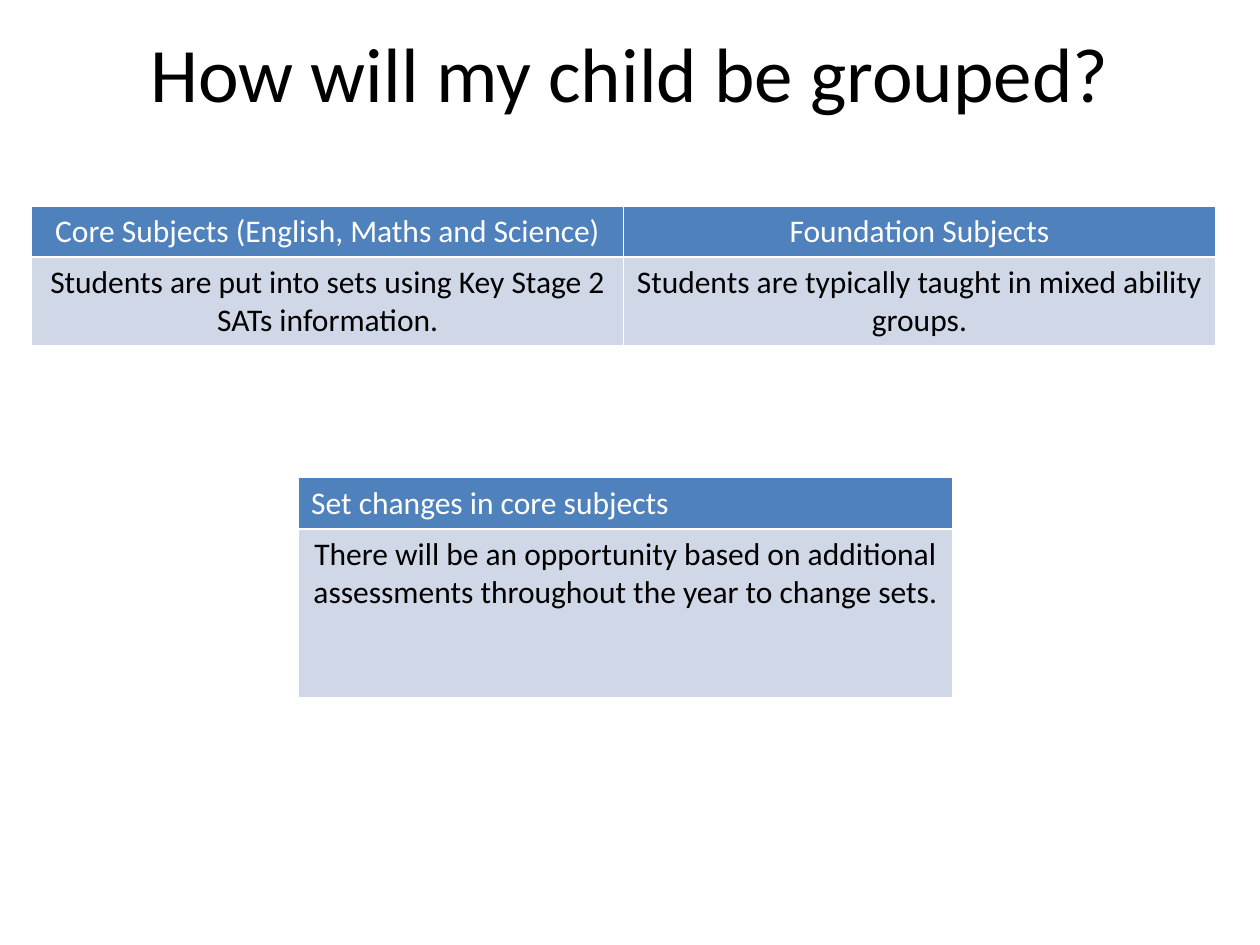
from pptx import Presentation
from pptx.dml.color import RGBColor
from pptx.enum.text import MSO_ANCHOR, PP_ALIGN
from pptx.util import Cm, Pt

COLORS = {"head": "4F81BD", "body": "D0D8E8", "light": "FFFFFF", "dark": "000000"}


def add_text(para, text, size, color, align):
    para.alignment = align
    run = para.add_run()
    run.text = text
    font = run.font
    font.name, font.size, font.bold = "Calibri", Pt(size), False
    font.color.rgb = RGBColor.from_string(COLORS[color])


deck = Presentation()
deck.slide_width, deck.slide_height = Cm(25.4), Cm(19.05)
slide = deck.slides.add_slide(deck.slide_layouts[6])

title = slide.shapes.add_textbox(Cm(1.27), Cm(0.76), Cm(22.86), Cm(1.37))
frame = title.text_frame
frame.word_wrap = True
frame.vertical_anchor = MSO_ANCHOR.MIDDLE
add_text(frame.paragraphs[0], "How will my child be grouped?", 44, "dark", PP_ALIGN.CENTER)

# left, top, width, row heights (cm), header alignment, rows of text
tables = [
    (0.64, 4.15, 23.86, (1.03, 1.78), PP_ALIGN.CENTER, [
        ["Core Subjects (English, Maths and Science)", "Foundation Subjects"],
        ["Students are put into sets using Key Stage 2 SATs information.",
         "Students are typically taught in mixed ability groups."],
    ]),
    (6.02, 9.63, 13.18, (1.03, 3.41), PP_ALIGN.LEFT, [
        ["Set changes in core subjects"],
        ["There will be an opportunity based on additional assessments "
         "throughout the year to change sets."],
    ]),
]

# The default table style draws the white cell borders.
for left, top, width, heights, align, rows in tables:
    table = slide.shapes.add_table(
        len(rows), len(rows[0]), Cm(left), Cm(top), Cm(width), Cm(sum(heights))
    ).table
    for r, texts in enumerate(rows):
        table.rows[r].height = Cm(heights[r])
        fill, color, side = (
            ("body", "dark", PP_ALIGN.CENTER) if r else ("head", "light", align)
        )
        for c, text in enumerate(texts):
            cell = table.cell(r, c)
            cell.fill.solid()
            cell.fill.fore_color.rgb = RGBColor.from_string(COLORS[fill])
            add_text(cell.text_frame.paragraphs[0], text, 18, color, side)

deck.save("out.pptx")
